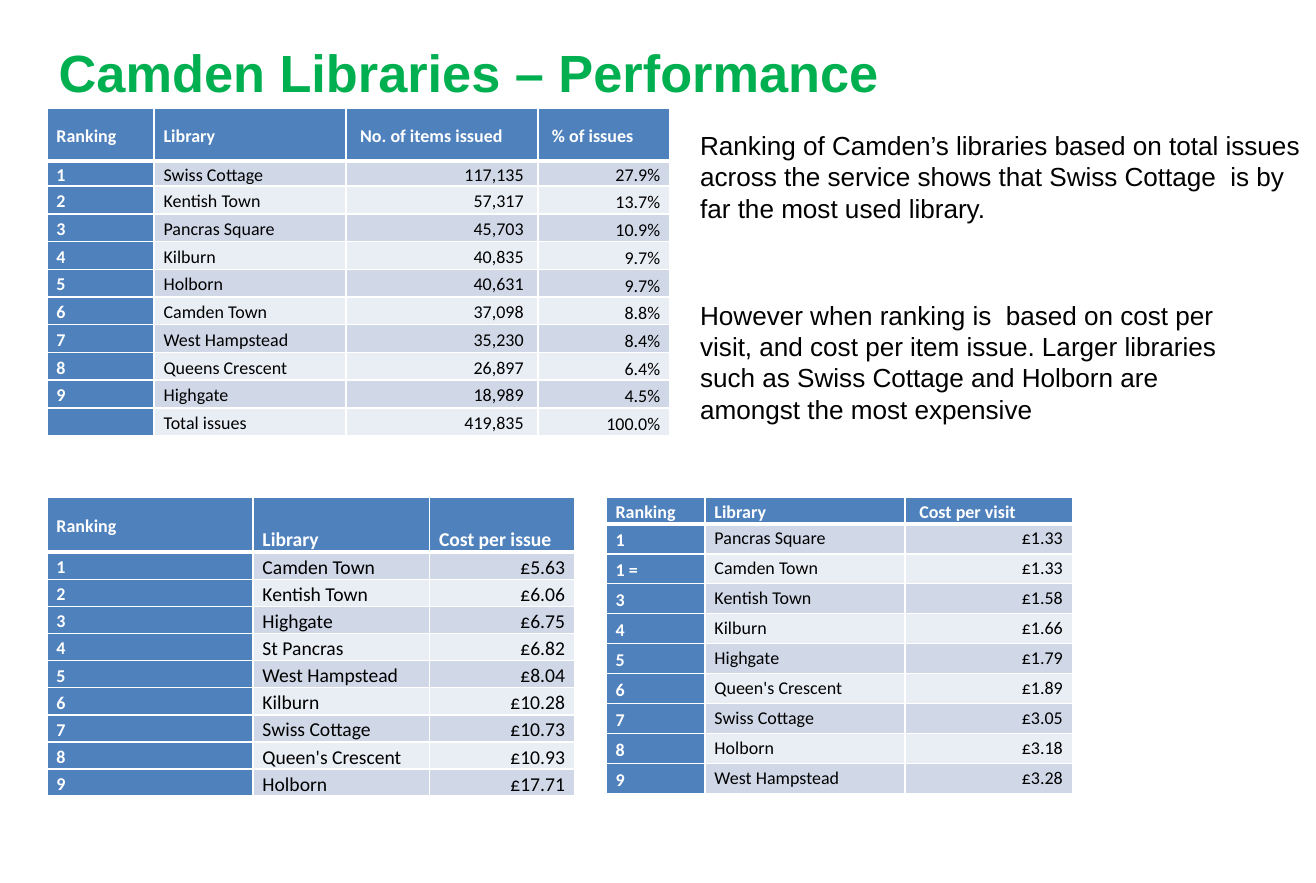
from lxml.etree import SubElement as Sub
from pptx import Presentation
from pptx.dml.color import RGBColor
from pptx.enum.text import MSO_ANCHOR as Anchor, MSO_AUTO_SIZE as Auto, PP_ALIGN as Align
from pptx.oxml.ns import qn
from pptx.util import Inches, Pt

GREEN = RGBColor(0x00, 0xB0, 0x50)
BLACK = RGBColor(0x00, 0x00, 0x00)
WHITE = RGBColor(0xFF, 0xFF, 0xFF)
BLUE = RGBColor(0x4F, 0x81, 0xBD)
BANDS = (RGBColor(0xE9, 0xED, 0xF4), RGBColor(0xD0, 0xD8, 0xE8))

TOP, MID, LOW = Anchor.TOP, Anchor.MIDDLE, Anchor.BOTTOM

ISSUES = [
    ("Ranking", "Library", "No. of items issued", "% of issues"),
    ("1", "Swiss Cottage", "117,135", "27.9%"),
    ("2", "Kentish Town", "57,317", "13.7%"),
    ("3", "Pancras Square", "45,703", "10.9%"),
    ("4", "Kilburn", "40,835", "9.7%"),
    ("5", "Holborn", "40,631", "9.7%"),
    ("6", "Camden Town", "37,098", "8.8%"),
    ("7", "West Hampstead", "35,230", "8.4%"),
    ("8", "Queens Crescent", "26,897", "6.4%"),
    ("9", "Highgate", "18,989", "4.5%"),
    ("", "Total issues", "419,835", "100.0%"),
]
VISITS = [
    ("Ranking", "Library", "Cost per visit"),
    ("1", "Pancras Square", "£1.33"),
    ("1 =", "Camden Town", "£1.33"),
    ("3", "Kentish Town", "£1.58"),
    ("4", "Kilburn", "£1.66"),
    ("5", "Highgate", "£1.79"),
    ("6", "Queen's Crescent", "£1.89"),
    ("7", "Swiss Cottage", "£3.05"),
    ("8", "Holborn", "£3.18"),
    ("9", "West Hampstead", "£3.28"),
]
COSTS = [
    ("Ranking", "Library", "Cost per issue"),
    ("1", "Camden Town", "£5.63"),
    ("2", "Kentish Town", "£6.06"),
    ("3", "Highgate", "£6.75"),
    ("4", "St Pancras", "£6.82"),
    ("5", "West Hampstead", "£8.04"),
    ("6", "Kilburn", "£10.28"),
    ("7", "Swiss Cottage", "£10.73"),
    ("8", "Queen's Crescent", "£10.93"),
    ("9", "Holborn", "£17.71"),
]


def set_font(para, name, size, color, bold=False):
    font = para.font
    font.name, font.size, font.bold = name, Pt(size), bold
    font.color.rgb = color


def add_text(slide, box, text, size, color=BLACK, bold=False):
    frame = slide.shapes.add_textbox(*map(Inches, box)).text_frame
    frame.word_wrap = True
    frame.auto_size = Auto.SHAPE_TO_FIT_TEXT
    para = frame.paragraphs[0]
    para.text = text
    set_font(para, "Arial", size, color, bold)


def set_edges(cell, row):
    """White lines, with a thick one under the header."""
    props = cell._tc.get_or_add_tcPr()
    widths = {"L": 1, "R": 1, "T": 3 if row == 1 else 1, "B": 3 if row == 0 else 1}
    for side, width in widths.items():
        line = Sub(props, qn(f"a:ln{side}"), w=str(Pt(width)))
        Sub(Sub(line, qn("a:solidFill")), qn("a:srgbClr"), val=str(WHITE))


def fill_cell(cell, text, row, col, size, anchor):
    head = row == 0 or col == 0
    set_edges(cell, row)
    cell.fill.solid()
    cell.fill.fore_color.rgb = BLUE if head else BANDS[row % 2]
    cell.margin_left = cell.margin_right = Inches(0.08)
    cell.margin_top = cell.margin_bottom = 0
    cell.vertical_anchor = anchor
    para = cell.text_frame.paragraphs[0]
    para.text = text
    para.line_spacing = 1.15
    para.alignment = Align.RIGHT if row and col > 1 else Align.LEFT
    set_font(para, "Calibri", size, WHITE if head else BLACK, head)


def add_table(slide, spot, data, cols, tall, first, heads, body, size=11):
    """Fix the first row heights; share the rest of the height equally."""
    box = (*spot, sum(cols), tall)
    table = slide.shapes.add_table(len(data), len(cols), *map(Inches, box)).table
    for col, width in zip(table.columns, cols):
        col.width = Inches(width)
    rest = (tall - sum(first)) / (len(data) - len(first))
    for r, values in enumerate(data):
        table.rows[r].height = Inches(first[r] if r < len(first) else rest)
        for c, text in enumerate(values):
            anchor = (body if r else heads)[c]
            fill_cell(table.cell(r, c), text, r, c, size if c else 11, anchor)
    return table


def main():
    deck = Presentation()
    deck.slide_width, deck.slide_height = Inches(11.18), Inches(7.5)
    slide = deck.slides.add_slide(deck.slide_layouts[6])

    # Title
    add_text(slide, (0.4, 0.29, 11.18, 0.64), "Camden Libraries – Performance",
             32, GREEN, True)

    # Ranking by items issued, with its figures set in a little
    issues = add_table(slide, (0.4, 0.92), ISSUES, (0.91, 1.63, 1.63, 1.12), 2.78,
                       (0.45, 0.21), (MID,) * 4, (MID, MID, MID, LOW))
    for row in range(1, len(ISSUES)):
        issues.cell(row, 2).margin_right = Inches(0.12)

    # Comments
    add_text(slide, (5.85, 1.05, 5.33, 0.91),
             "Ranking of Camden’s libraries based on total issues across the "
             "service shows that Swiss Cottage  is by far the most used library.", 16)
    add_text(slide, (5.85, 2.49, 4.84, 1.18),
             "However when ranking is  based on cost per visit, and cost per item "
             "issue. Larger libraries such as Swiss Cottage and Holborn are amongst "
             "the most expensive", 16)

    # Rankings by cost
    visits = add_table(slide, (5.15, 4.22), VISITS, (0.84, 1.7, 1.42), 2.52,
                       (0.23,), (MID,) * 3, (MID, TOP, TOP))
    add_table(slide, (0.4, 4.22), COSTS, (1.75, 1.5, 1.23), 2.54,
              (0.47,), (MID, LOW, LOW), (MID, LOW, LOW), 12)

    # Headings set in a little
    for cell in (issues.cell(0, 2), issues.cell(0, 3), visits.cell(0, 2)):
        cell.margin_left = Inches(0.12)

    deck.save("out.pptx")


if __name__ == "__main__":
    main()
